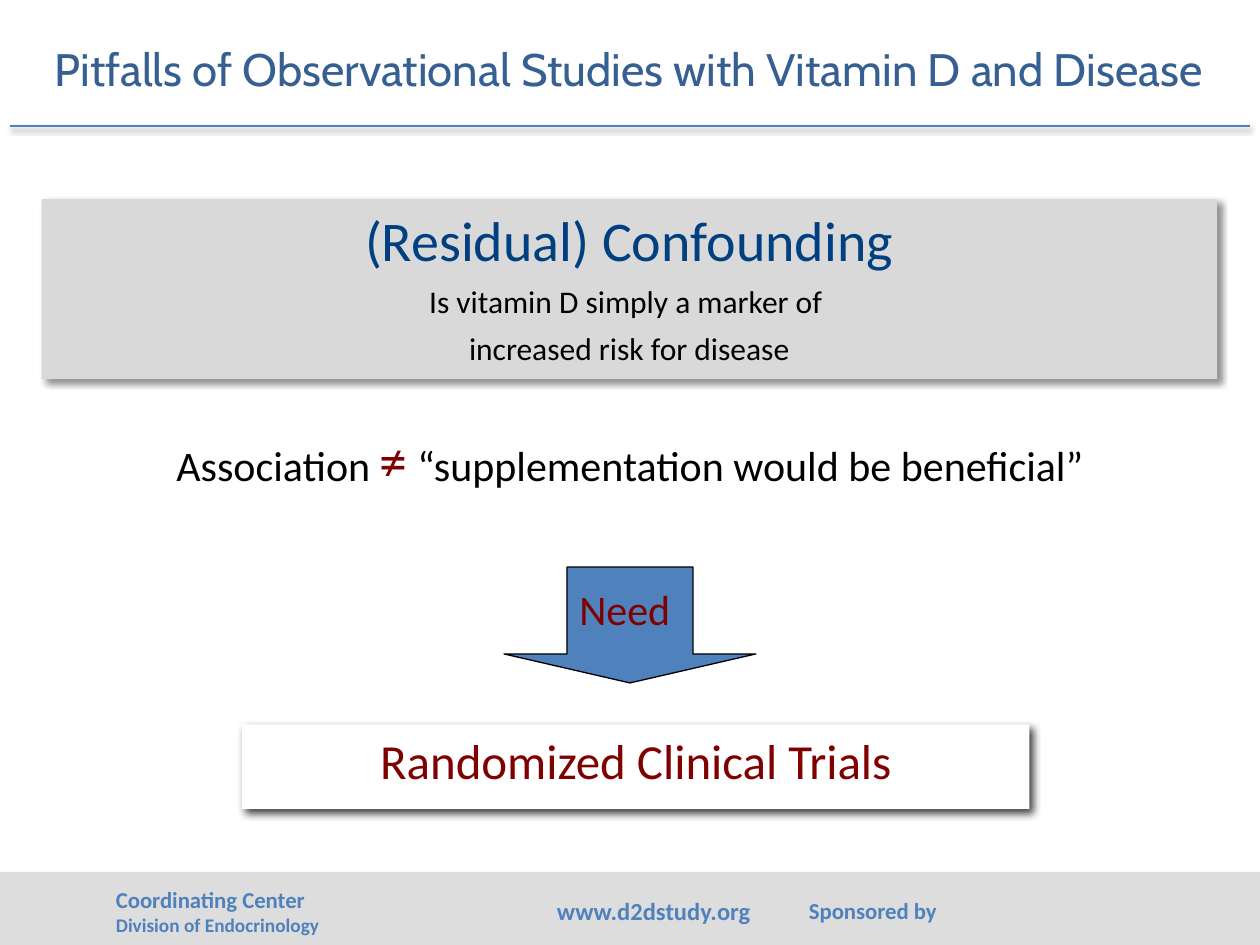
from lxml.etree import SubElement
from pptx import Presentation
from pptx.dml.color import RGBColor
from pptx.enum.shapes import MSO_CONNECTOR, MSO_SHAPE
from pptx.enum.text import MSO_ANCHOR, PP_ALIGN
from pptx.oxml.ns import qn
from pptx.util import Inches, Pt

COLORS = {
    "blue": "4F81BD", "title": "376092", "navy": "004080", "maroon": "800000",
    "black": "000000", "white": "FFFFFF", "panel": "D9D9D9", "footer": "BFBFBF",
}


def write_text(shape, paragraphs, align=PP_ALIGN.LEFT, anchor=MSO_ANCHOR.TOP,
               font="Calibri", bold=False, margin=None, space=0, shadow=False):
    """Fill a shape; each paragraph is a list of (text, size, colour) runs."""
    frame = shape.text_frame
    frame.word_wrap = True
    frame.vertical_anchor = anchor
    if margin is not None:
        frame.margin_left = frame.margin_right = Inches(margin)
        frame.margin_top = frame.margin_bottom = Inches(margin)
    for number, runs in enumerate(paragraphs):
        paragraph = frame.add_paragraph() if number else frame.paragraphs[0]
        paragraph.alignment = align
        paragraph.space_before = Pt(space if number else 0)
        for text, size, color in runs:
            run = paragraph.add_run()
            run.text = text
            run.font.size = Pt(size)
            run.font.bold = bold
            run.font.color.rgb = RGBColor.from_string(COLORS[color])
            if shadow:
                add_shadow(run.font._element, 43, 4, 3, 45)
            run.font.name = font


def add_shadow(properties, opacity, blur, distance, angle):
    effects = properties.find(qn("a:effectLst"))
    if effects is None:
        effects = SubElement(properties, qn("a:effectLst"))
    outer = SubElement(effects, qn("a:outerShdw"), blurRad=str(Pt(blur)),
                       dist=str(Pt(distance)), dir=str(angle * 60000),
                       algn="tl", rotWithShape="0")
    color = SubElement(outer, qn("a:srgbClr"), val=COLORS["black"])
    SubElement(color, qn("a:alpha"), val=str(opacity * 1000))


prs = Presentation()
prs.slide_width, prs.slide_height = Inches(10), Inches(7.5)
slide = prs.slides.add_slide(prs.slide_layouts[5])
shapes = slide.shapes

# Filled shapes: footer band, confounding panel, need arrow, trials box
blocks = []
for kind, left, top, width, height, fill in [
    (MSO_SHAPE.RECTANGLE, 0, 6.92, 10, 0.58, "footer"),
    (MSO_SHAPE.RECTANGLE, 0.33, 1.58, 9.33, 1.43, "panel"),
    (MSO_SHAPE.DOWN_ARROW, 4, 4.5, 2, 0.92, "blue"),
    (MSO_SHAPE.RECTANGLE, 1.92, 5.75, 6.25, 0.67, "white"),
]:
    block = shapes.add_shape(kind, Inches(left), Inches(top), Inches(width), Inches(height))
    block.shadow.inherit = False
    block.fill.solid()
    block.fill.fore_color.rgb = RGBColor.from_string(COLORS[fill])
    block.line.fill.background()
    blocks.append(block)
footer_band, confounding, need_arrow, trials = blocks

band_color = footer_band._element.spPr.find(qn("a:solidFill")).find(qn("a:srgbClr"))
SubElement(band_color, qn("a:alpha"), val="52000")

need_arrow.adjustments[0], need_arrow.adjustments[1] = 0.5, 0.25
need_arrow.line.color.rgb = RGBColor.from_string(COLORS["black"])
need_arrow.line.width = Pt(0.75)

add_shadow(confounding._element.spPr, 43, 4, 3, 45)
write_text(confounding, [
    [("(Residual) Confounding", 32, "navy")],
    [("Is vitamin D simply a marker of ", 18, "black")],
    [("increased risk for disease", 18, "black")],
], align=PP_ALIGN.CENTER, space=5.4)

add_shadow(trials._element.spPr, 75, 5, 3, 45)
write_text(trials, [[("Randomized Clinical Trials", 28, "maroon")]], align=PP_ALIGN.CENTER)

# Title and the rule below it
title = shapes.title
title.left, title.top = Inches(0.08), Inches(0.17)
title.width, title.height = Inches(9.83), Inches(0.75)
write_text(title, [[("Pitfalls of Observational Studies with Vitamin D and Disease", 26, "title")]],
           align=PP_ALIGN.CENTER, anchor=MSO_ANCHOR.MIDDLE, font="Cabin", shadow=True)

rule = shapes.add_connector(MSO_CONNECTOR.STRAIGHT, Inches(0.08), Inches(1), Inches(9.92), Inches(1))
rule.line.color.rgb = RGBColor.from_string(COLORS["blue"])
rule.line.width = Pt(1)
add_shadow(rule._element.spPr, 38, 3.1, 1.6, 90)

# Association statement and arrow label
association = shapes.add_textbox(Inches(0), Inches(3.33), Inches(10), Inches(0.92))
write_text(association, [[
    ("Association ", 24, "black"),
    ("≠", 32, "maroon"),
    (" “supplementation would be beneficial”", 24, "black"),
]], align=PP_ALIGN.CENTER, shadow=True)

need = shapes.add_textbox(Inches(4.5), Inches(4.58), Inches(1.04), Inches(0.5))
write_text(need, [[("Need", 24, "maroon")]], shadow=True)

# Footer texts
for left, top, width, height, lines in [
    (0.92, 7.03, 1.67, 0.4, [("Coordinating Center", 13), ("Division of Endocrinology", 11)]),
    (4.42, 7.11, 1.58, 0.24, [("www.d2dstudy.org", 14)]),
    (6.42, 7.12, 1.17, 0.22, [("Sponsored by", 13)]),
]:
    footer = shapes.add_textbox(Inches(left), Inches(top), Inches(width), Inches(height))
    write_text(footer, [[(text, size, "blue")] for text, size in lines], bold=True, margin=0)

prs.save("out.pptx")
